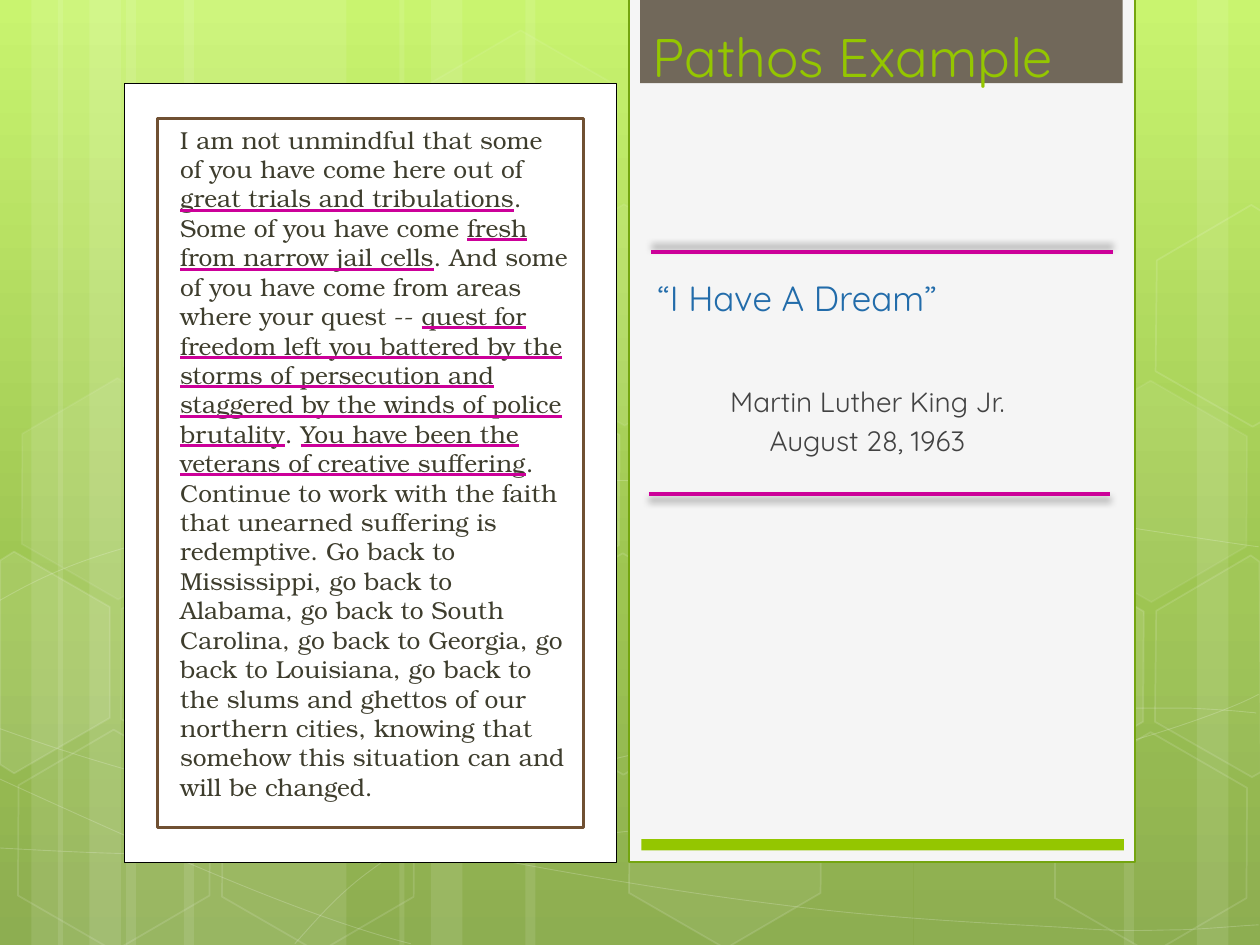
from copy import deepcopy
from dataclasses import dataclass
from lxml.etree import SubElement
from math import cos, radians, sin
from pptx import Presentation
from pptx.dml.color import RGBColor
from pptx.enum.shapes import MSO_CONNECTOR, MSO_SHAPE
from pptx.enum.text import MSO_ANCHOR, MSO_AUTO_SIZE, MSO_UNDERLINE, PP_ALIGN
from pptx.oxml.ns import qn
from pptx.util import Inches, Pt


@dataclass(frozen=True)
class Theme:
    sky: tuple = ((0, "C3F35F"), (0.62, "93BF3F"), (1, "81A53E"))
    white: str = "FFFFFF"
    black: str = "000000"
    panel: str = "F5F5F5"
    panel_edge: str = "74A510"
    header: str = "71685A"
    green: str = "94C600"
    brown: str = "705032"
    quote: str = "3E3D2D"
    blue: str = "226CAA"
    grey: str = "424242"
    accent: str = "CC0099"
    sans: str = "Quicksand"
    serif: str = "TeX Gyre Bonum"
    heading_size: float = 31
    title_size: float = 20
    author_size: float = 16
    quote_size: float = 14


T = Theme()
TILT = 30
BANDS = [(1, 1.75), (0, 0.5), (0.25, 0.83), (1.46, 1.75), (0.46, 0.5), (0.71, 0.83),
         (7.25, 1.75), (9.5, 0.5), (8.92, 0.83), (4.17, 3.08), (3.17, 0.5), (3.42, 0.83)]
CURVES = [
    [(-0.01, 6.73), (0.53, 6.76), (1.07, 6.79), (1.82, 6.78), (2.57, 6.77), (3.49, 6.75),
     (4.49, 6.65), (5.5, 6.55), (6.92, 6.36), (7.83, 6.17), (8.75, 5.98), (9.68, 5.68),
     (9.99, 5.51)],
    [(-0.01, 4.77), (0.27, 4.61), (0.56, 4.46), (1.13, 4.31), (1.7, 4.16), (2.5, 3.94),
     (3.39, 3.87), (4.28, 3.8), (5.35, 3.79), (6.45, 3.87), (7.55, 3.95), (9.39, 4.26),
     (9.99, 4.34)],
    [(-0.03, 6.17), (1.18, 6.72), (2.39, 7.27), (3.26, 7.49)],
    [(-0.01, 5.78), (0.3, 5.89), (0.61, 6), (1.19, 6.16), (1.78, 6.31), (2.65, 6.56),
     (3.48, 6.73), (4.31, 6.9), (5.37, 7.08), (6.19, 7.18), (7.02, 7.29), (7.91, 7.33),
     (8.44, 7.36), (8.97, 7.4), (9.11, 7.38), (9.36, 7.38), (9.62, 7.37), (9.8, 7.35),
     (9.99, 7.34)],
    [(2.34, 7.49), (2.52, 7.29), (2.69, 7.09), (2.94, 6.91), (3.18, 6.73), (3.51, 6.53),
     (3.79, 6.39), (4.07, 6.25), (4.24, 6.19), (4.61, 6.09), (4.98, 5.99), (5.65, 5.85),
     (6, 5.78), (6.35, 5.71), (6.4, 5.71), (6.71, 5.69), (7.02, 5.66), (7.51, 5.63),
     (7.86, 5.62), (8.2, 5.61), (8.78, 5.62), (8.78, 5.62), (9, 5.62), (9.22, 5.62),
     (9.44, 5.62), (9.63, 5.63), (9.79, 5.64), (9.88, 5.65), (9.97, 5.66), (9.94, 5.65),
     (9.97, 5.66)],
]
HEXAGONS = [(3.28, 3.13, 10, 12), (4.07, 4.51, 0, 12), (4.08, 1.74, 7, 8), (3.26, 0.36, 4, 8),
            (4.88, 5.89, 6, 12), (0.03, 5.91, 0, 12), (0.06, 3.12, 7, 8), (0.85, 4.51, 0, 12),
            (1.65, 5.92, 0, 12), (0.87, 1.71, 0, 12), (7.44, 4.53, 10, 12),
            (8.26, 5.93, 0, 12), (8.26, 3.14, 7, 8)]
CUT_HEXAGONS = [
    ((0.27, 5.35), 10,
     [(0, 4.45), (0.11, 4.38), (0.87, 4.82), (0.87, 5.7), (0.11, 6.14), (0, 6.07)]),
    ((9.76, 5.2), 4,
     [(9.18, 4.85), (9.93, 4.41), (10, 4.46), (10.01, 6.13), (9.94, 6.17), (9.17, 5.73)]),
    ((9.76, 2.41), 0,
     [(9.18, 2.07), (9.93, 1.63), (10.01, 1.68), (10.01, 3.35), (9.94, 3.39), (9.17, 2.95)]),
]
QUOTE = [
    ("I am not unmindful that some of you have come here out of ", False),
    ("great trials and tribulations", True),
    (". Some of you have come ", False),
    ("fresh from narrow jail cells", True),
    (". And some of you have come from areas where your quest -- ", False),
    ("quest for freedom left you battered by the storms of persecution and staggered by "
     "the winds of police brutality", True),
    (". ", False),
    ("You have been the veterans of creative suffering", True),
    (". Continue to work with the faith that unearned suffering is redemptive. Go back to "
     "Mississippi, go back to Alabama, go back to South Carolina, go back to Georgia, go back "
     "to Louisiana, go back to the slums and ghettos of our northern cities, knowing that "
     "somehow this situation can and will be changed.", False),
]


def inches(*values):
    return [Inches(v) for v in values]


def fade(parent, percent):
    clr = parent.find(qn("a:solidFill")).find(qn("a:srgbClr"))
    SubElement(clr, qn("a:alpha")).set("val", str(percent * 1000))


def paint(sp, fill=None, line=None, width=1, fill_alpha=100, line_alpha=100):
    sp.shadow.inherit = False
    spPr = sp._element.spPr
    if fill and fill_alpha:
        sp.fill.solid()
        sp.fill.fore_color.rgb = RGBColor.from_string(fill)
        if fill_alpha < 100:
            fade(spPr, fill_alpha)
    else:
        sp.fill.background()
    if line:
        sp.line.color.rgb = RGBColor.from_string(line)
        sp.line.width = Pt(width)
        if line_alpha < 100:
            fade(spPr.find(qn("a:ln")), line_alpha)
    else:
        sp.line.fill.background()
    return sp


def add_box(s, box, kind=MSO_SHAPE.RECTANGLE, **look):
    return paint(s.shapes.add_shape(kind, *inches(*box)), **look)


def add_outline(s, points, close, **look):
    start, *rest = [inches(*pt) for pt in points]
    fb = s.shapes.build_freeform(*start, scale=1.0)
    fb.add_line_segments(rest, close=close)
    return paint(fb.convert_to_shape(), **look)


def bend(sp):
    segments = list(sp._element.spPr.iter(qn("a:lnTo")))
    for i in range(0, len(segments), 3):
        curve = SubElement(segments[i].getparent(), qn("a:cubicBezTo"))
        for segment in segments[i:i + 3]:
            curve.append(segment[0])
            segment.getparent().remove(segment)


def turn_back(points, center):
    cx, cy = center
    c, k = cos(radians(TILT)), sin(radians(TILT))
    return [(cx + (x - cx) * c + (y - cy) * k, cy - (x - cx) * k + (y - cy) * c)
            for x, y in points]


def write(sp, paragraphs, font, size, color, anchor=MSO_ANCHOR.TOP, **para):
    tf = sp.text_frame
    frame = {"word_wrap": True, "auto_size": MSO_AUTO_SIZE.NONE, "vertical_anchor": anchor}
    for name, value in frame.items():
        setattr(tf, name, value)
    for i, runs in enumerate(paragraphs):
        p = tf.paragraphs[0] if i == 0 else tf.add_paragraph()
        for name, value in ({"alignment": PP_ALIGN.LEFT} | para).items():
            setattr(p, name, value)
        for text, underlined in runs:
            r = p.add_run()
            r.text = text
            for name, value in {"name": font, "size": Pt(size)}.items():
                setattr(r.font, name, value)
            r.font.color.rgb = RGBColor.from_string(color)
            if underlined:
                r.font.underline = MSO_UNDERLINE.HEAVY_LINE
                u_fill = SubElement(r._r.rPr, qn("a:uFill"))
                solid = SubElement(u_fill, qn("a:solidFill"))
                SubElement(solid, qn("a:srgbClr")).set("val", T.accent)
                r._r.rPr.find(qn("a:latin")).addprevious(u_fill)


def add_backdrop(s, box):
    x, y, w, h = box
    fill = s.background.fill
    fill.gradient()
    fill.gradient_angle = 270
    gs = fill.gradient_stops[0]._gs
    gs.addnext(deepcopy(gs))
    for stop, (position, color) in zip(fill.gradient_stops, T.sky):
        stop.position = position
        stop.color.rgb = RGBColor.from_string(color)
    for left, width in BANDS:
        add_box(s, (x + left, y, width, h), fill=T.white, fill_alpha=10)
    for points in CURVES:
        bend(add_outline(s, points, False, line=T.white, width=0.5, line_alpha=20))
    for left, top, fill_alpha, line_alpha in HEXAGONS:
        sp = add_box(s, (x + left, y + top, 1.75, 1.52), MSO_SHAPE.HEXAGON, fill=T.white,
                     line=T.white, fill_alpha=fill_alpha, line_alpha=line_alpha)
        sp.rotation = TILT
        sp.adjustments[0] = 0.285
    for center, fill_alpha, points in CUT_HEXAGONS:
        sp = add_outline(s, turn_back(points, center), True, fill=T.white, line=T.white,
                         fill_alpha=fill_alpha, line_alpha=12)
        sp.rotation = TILT


def add_quote_card(s, box):
    x, y, w, h = box
    add_box(s, box, fill=T.white, line=T.black, width=0.25)
    sp = add_box(s, (x + 0.26, y + 0.28, w - 0.52, h - 0.55), line=T.brown, width=1.5)
    write(sp, [QUOTE], T.serif, T.quote_size, T.quote)
    sp.text_frame.margin_left = Inches(0.18)


def add_rule(s, x, y, w, direction):
    cn = s.shapes.add_connector(MSO_CONNECTOR.STRAIGHT, *inches(x, y, x + w, y))
    cn.line.color.rgb = RGBColor.from_string(T.accent)
    cn.line.width = Pt(2.25)
    shadow = SubElement(SubElement(cn._element.spPr, qn("a:effectLst")), qn("a:outerShdw"))
    for name, value in {"blurRad": Pt(4), "dist": Pt(3), "dir": direction * 60000}.items():
        shadow.set(name, str(value))
    clr = SubElement(shadow, qn("a:srgbClr"))
    clr.set("val", T.black)
    SubElement(clr, qn("a:alpha")).set("val", "40000")


def add_title_panel(s, box):
    x, y, w, h = box
    add_box(s, box, fill=T.panel, line=T.panel_edge, width=1.25)
    add_box(s, (x + 0.09, y, 3.83, 0.68), fill=T.header)
    add_box(s, (x + 0.1, y + 6.68, 3.83, 0.09), fill=T.green)
    title = s.shapes.title
    place = dict(zip(("left", "top", "width", "height"), inches(x + 0.13, y + 1.27, 3.61, 1.33)))
    for name, value in place.items():
        setattr(title, name, value)
    s.shapes._spTree.append(title._element)
    write(title, [[("“I Have A Dream”", False)]], T.sans, T.title_size, T.blue, MSO_ANCHOR.BOTTOM)
    author = s.shapes.add_textbox(*inches(x + 0.09, y + 3.02, 3.61, 1.66))
    write(author, [[("Martin Luther King Jr.", False)], [("August 28, 1963", False)]], T.sans,
          T.author_size, T.grey, alignment=PP_ALIGN.CENTER, space_before=Pt(3.2))
    heading = s.shapes.add_textbox(*inches(x + 0.09, y + 0.02, 3.83, 0.75))
    write(heading, [[("Pathos Example", False)]], T.sans, T.heading_size, T.green,
          MSO_ANCHOR.BOTTOM)
    add_rule(s, x + 0.16, y + 3.94, 3.66, 90)
    add_rule(s, x + 0.18, y + 2.02, 3.66, 270)


def main():
    prs = Presentation()
    prs.slide_width, prs.slide_height = inches(10, 7.5)
    s = prs.slides.add_slide(prs.slide_layouts[5])
    add_backdrop(s, (0, 0, 10, 7.5))
    add_quote_card(s, (0.99, 0.66, 3.9, 6.18))
    add_title_panel(s, (4.99, -0.02, 4.02, 6.86))
    prs.save("out.pptx")


if __name__ == "__main__":
    main()
